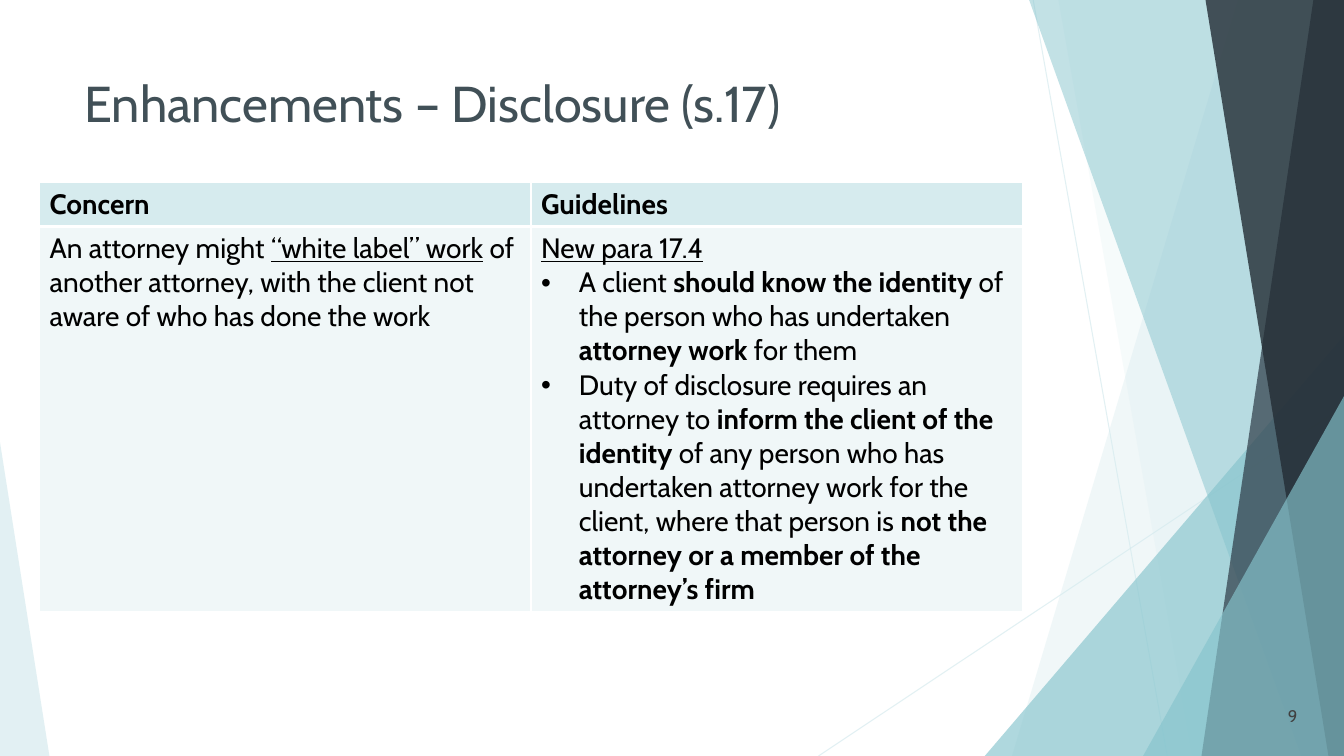
from lxml import etree
from pptx import Presentation
from pptx.dml.color import RGBColor
from pptx.enum.shapes import MSO_CONNECTOR, MSO_SHAPE
from pptx.enum.text import MSO_ANCHOR, PP_ALIGN
from pptx.oxml.ns import qn
from pptx.util import Pt

STRAIGHT = MSO_CONNECTOR.STRAIGHT
TRIANGLE = MSO_SHAPE.ISOSCELES_TRIANGLE
TOP, MIDDLE = MSO_ANCHOR.TOP, MSO_ANCHOR.MIDDLE
LEFT, RIGHT = PP_ALIGN.LEFT, PP_ALIGN.RIGHT
WIDTH, HEIGHT = 960, 540
FONT = "Cabin"
COLORS = {
    "pale": "D6EBEE", "teal": "86C4CD", "slate": "2E3B46", "night": "232C34",
    "title": "415057", "number": "404040", "text": "000000",
    "body": "F0F7F8", "white": "FFFFFF",
}
BANDS = [
    (884.16, 722.88, "pale", 36),
    (756, 851.76, "pale", 20),
    (735.12, 929.52, "teal", 50),
    (938.16, 858.24, "slate", 70),
    (861.12, 948.96, "night", 80),
]
CONCERN = [
    [("An attorney might ", ""), ("“white label” work", "u"),
     (" of another attorney, with the client not aware of who has done the work", "")],
]
GUIDELINES = [
    [("New para 17.4", "u")],
    [("A client ", ""), ("should know the identity ", "b"),
     ("of the person who has undertaken ", ""), ("attorney work ", "b"), ("for them", "")],
    [("Duty of disclosure requires an attorney to ", ""),
     ("inform the client of the identity ", "b"),
     ("of any person who has undertaken attorney work for the client, where that person is ", ""),
     ("not the attorney or a member of the attorney’s firm", "b")],
]


def rgb(name):
    """Return the named colour."""
    return RGBColor.from_string(COLORS[name])


def set_alpha(element, percent):
    """Make the first solid colour inside an element translucent."""
    color = next(element.iter(qn("a:srgbClr")))
    etree.SubElement(color, qn("a:alpha")).set("val", str(percent * 1000))


def paint(shape, color, percent):
    """Give a shape a translucent fill and no line or shadow."""
    shape.shadow.inherit = False
    shape.fill.solid()
    shape.fill.fore_color.rgb = rgb(color)
    set_alpha(shape.element.spPr, percent)
    shape.line.fill.background()


def add_band(page, top_x, bottom_x, color, percent):
    """Draw a slanted band reaching the right edge of the page."""
    builder = page.shapes.build_freeform(Pt(top_x), 0)
    corners = [(WIDTH, 0), (WIDTH, HEIGHT), (bottom_x, HEIGHT)]
    builder.add_line_segments([(Pt(x), Pt(y)) for x, y in corners])
    paint(builder.convert_to_shape(), color, percent)


def add_triangle(page, left, top, width, apex, color, percent):
    """Draw a right triangle standing on the bottom edge of the page."""
    shape = page.shapes.add_shape(TRIANGLE, Pt(left), Pt(top), Pt(width), Pt(HEIGHT - top))
    shape.adjustments[0] = apex
    paint(shape, color, percent)


def add_hairline(page, x1, y1, x2, y2):
    """Draw a thin pale line."""
    line = page.shapes.add_connector(STRAIGHT, Pt(x1), Pt(y1), Pt(x2), Pt(y2))
    line.line.color.rgb = rgb("pale")
    line.line.width = Pt(0.75)
    set_alpha(line.element.spPr, 70)
    etree.SubElement(line.element.spPr, qn("a:effectLst"))


def set_font(para, size, color, bold=False):
    """Set the font of a whole paragraph."""
    font = para.font
    font.name, font.size, font.bold = FONT, Pt(size), bold
    font.color.rgb = rgb(color)


def add_text(page, text, left, top, width, height, size, color, align=LEFT, anchor=TOP):
    """Add a text box with one paragraph."""
    box = page.shapes.add_textbox(Pt(left), Pt(top), Pt(width), Pt(height))
    frame = box.text_frame
    frame.word_wrap = True
    frame.vertical_anchor = anchor
    para = frame.paragraphs[0]
    para.text = text
    para.alignment = align
    set_font(para, size, color)


def add_bullet(para):
    """Give a paragraph a round bullet and a hanging indent."""
    properties = para._p.get_or_add_pPr()
    properties.set("marL", str(Pt(27)))
    properties.set("indent", str(-Pt(27)))
    etree.SubElement(properties, qn("a:buFont")).set("typeface", "Arial")
    etree.SubElement(properties, qn("a:buChar")).set("char", "•")


def style_cell(cell, color, top, bottom):
    """Set the white borders and the fill of a cell."""
    properties = cell._tc.get_or_add_tcPr()
    for side, width in (("L", 1), ("R", 1), ("T", top), ("B", bottom)):
        border = etree.SubElement(properties, qn(f"a:ln{side}"), w=str(Pt(width)))
        fill = etree.SubElement(border, qn("a:solidFill"))
        etree.SubElement(fill, qn("a:srgbClr")).set("val", COLORS["white"])
    cell.fill.solid()
    cell.fill.fore_color.rgb = rgb(color)


def fill_cell(cell, paragraphs):
    """Write styled paragraphs, with bullets after the first one."""
    frame = cell.text_frame
    for index, spans in enumerate(paragraphs):
        para = frame.add_paragraph() if index else frame.paragraphs[0]
        if index:
            add_bullet(para)
        set_font(para, 20, "text")
        for text, style in spans:
            span = para.add_run()
            span.text = text
            if style == "b":
                span.font.bold = True
            elif style == "u":
                span.font.underline = True


def add_disclosure_table(page):
    """Add the table of concerns and guidelines."""
    table = page.shapes.add_table(2, 2, Pt(28.3), Pt(130.5), Pt(702), Pt(306)).table
    table.rows[0].height, table.rows[1].height = Pt(31), Pt(275)
    columns = [("Concern", CONCERN), ("Guidelines", GUIDELINES)]
    for index, (heading, paragraphs) in enumerate(columns):
        header, body = table.cell(0, index), table.cell(1, index)
        style_cell(header, "pale", 1, 3)
        style_cell(body, "body", 3, 1)
        header.text = heading
        set_font(header.text_frame.paragraphs[0], 20, "text", bold=True)
        fill_cell(body, paragraphs)


def add_backdrop(page):
    """Draw the translucent facets from back to front."""
    add_hairline(page, 738, 0, 833.76, HEIGHT)
    add_hairline(page, WIDTH, 290.16, 584.64, HEIGHT)
    for band in BANDS[:2]:
        add_band(page, *band)
    add_triangle(page, 703.44, 239.76, 256.56, 1, "teal", 66)
    for band in BANDS[2:]:
        add_band(page, *band)
    add_triangle(page, 816.48, 282.96, 143.52, 1, "teal", 66)
    add_triangle(page, 0, 316, 35.28, 0, "pale", 70)


def main():
    """Build the slide and save it."""
    deck = Presentation()
    deck.slide_width, deck.slide_height = Pt(WIDTH), Pt(HEIGHT)
    page = deck.slides.add_slide(deck.slide_layouts[6])
    add_backdrop(page)
    add_text(page, "Enhancements – Disclosure (s.17)", 53.28, 48.24, 676.8, 71.28, 36, "title")
    add_disclosure_table(page)
    add_text(page, "9", 879.84, 496.8, 54, 28.8, 12, "number", RIGHT, MIDDLE)
    deck.save("out.pptx")


if __name__ == "__main__":
    main()
